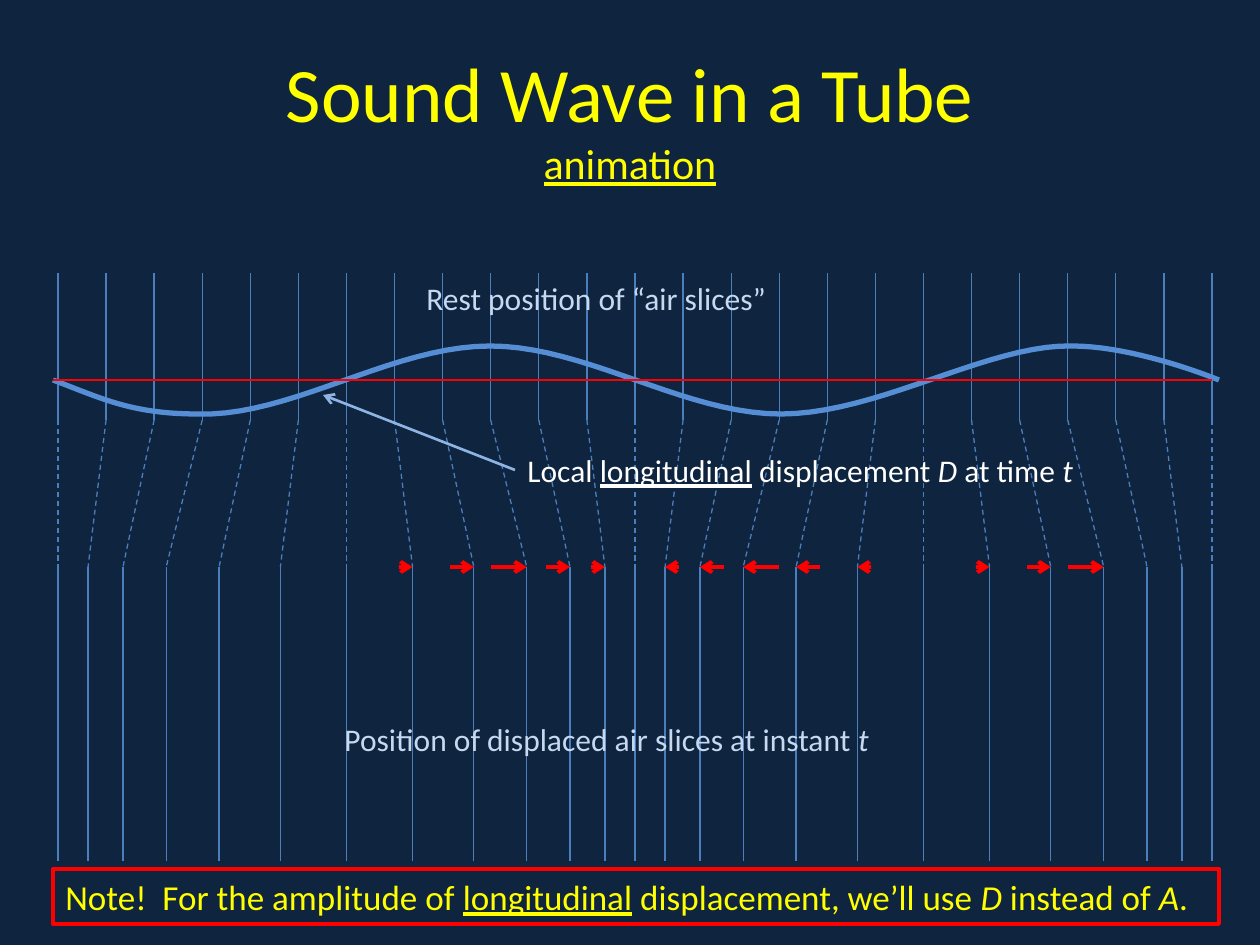
from dataclasses import dataclass
from math import pi, sin
from typing import NamedTuple

from lxml.etree import SubElement
from pptx import Presentation
from pptx.dml.color import RGBColor as Rgb
from pptx.enum.dml import MSO_LINE_DASH_STYLE as Dash
from pptx.enum.shapes import MSO_CONNECTOR as Connector, MSO_SHAPE as Preset
from pptx.enum.text import MSO_ANCHOR as Anchor, PP_ALIGN as Align
from pptx.oxml.ns import qn
from pptx.util import Pt

EMU_PER_PX = 914400 / 126


@dataclass(frozen=True)
class Theme:
    background: Rgb = Rgb.from_string("0F243E")
    accent: Rgb = Rgb.from_string("FFFF00")
    slice: Rgb = Rgb.from_string("4B7EBC")
    wave: Rgb = Rgb.from_string("558ED5")
    pointer: Rgb = Rgb.from_string("8EB4E3")
    caption: Rgb = Rgb.from_string("C6D9F1")
    label: Rgb = Rgb.from_string("FFFFFF")
    red: Rgb = Rgb.from_string("FF0000")
    font: str = "Calibri"
    title_size: int = 44
    subtitle_size: int = 24
    note_size: int = 20
    label_size: int = 18


class Box(NamedTuple):
    left: int
    top: int
    width: int
    height: int


THEME = Theme()
SLICE_COUNT = 25
SLICES_PER_HALF_WAVE = 6
AMPLITUDE = 36
ARROW_LENGTHS = (0, 12, 24, 36, 24, 12)
ARROW_SLICES = range(7, 22)
WAVE_CURVES = (
    ((48, 18), (78, 34), (145, 34)),
    ((238, 37), (339, -34), (437, -34)),
    ((534, -34), (631, 34), (728, 34)),
    ((825, 34), (936, -36), (1019, -34)),
    ((1084, -34), (1166, 0), (1166, 0)),
)
CURVE_STEPS = 20


def px(length):
    return round(length * EMU_PER_PX)


def add_line(slide, start, end, color, width, dash=None, arrow=False):
    points = [px(value) for value in (*start, *end)]
    line = slide.shapes.add_connector(Connector.STRAIGHT, *points)
    line.line.color.rgb = color
    line.line.width = Pt(width)
    if dash:
        line.line.dash_style = dash
    if arrow:
        SubElement(line.line._get_or_add_ln(), qn("a:tailEnd"), type="arrow")
    SubElement(line._element.spPr, qn("a:effectLst"))
    return line


def format_run(run, size, color, style=""):
    run.font.name = THEME.font
    run.font.size = Pt(size)
    run.font.color.rgb = color
    if style == "underline":
        run.font.underline = True
    if style == "italic":
        run.font.italic = True


def write_runs(shape, parts, size, color):
    shape.text_frame.word_wrap = True
    paragraph = shape.text_frame.paragraphs[0]
    paragraph.alignment = Align.LEFT
    for text, style in parts:
        run = paragraph.add_run()
        run.text = text
        format_run(run, size, color, style)


def add_label(slide, box, parts, color):
    label = slide.shapes.add_textbox(*map(px, box))
    write_runs(label, parts, THEME.label_size, color)
    return label


def add_title(slide, box):
    title = slide.shapes.add_textbox(*map(px, box))
    frame = title.text_frame
    frame.word_wrap = True
    frame.vertical_anchor = Anchor.MIDDLE
    paragraph = frame.paragraphs[0]
    paragraph.text = "Sound Wave in a Tube\vanimation"
    paragraph.alignment = Align.CENTER
    heading, subtitle = paragraph.runs
    format_run(heading, THEME.title_size, THEME.accent)
    format_run(subtitle, THEME.subtitle_size, THEME.accent, "underline")


def add_slices(slide, box):
    rest_bottom = box.top + box.height // 4
    displaced_top = box.top + box.height // 2
    bottom = box.top + box.height
    pitch = box.width / (SLICE_COUNT - 1)
    for index in range(SLICE_COUNT):
        rest = box.left + index * pitch
        shift = -AMPLITUDE * sin(pi * index / SLICES_PER_HALF_WAVE)
        displaced = rest + shift
        stops = ((rest, box.top), (rest, rest_bottom),
                 (displaced, displaced_top), (displaced, bottom))
        for start, end, dash in zip(stops, stops[1:], (None, Dash.DASH, None)):
            add_line(slide, start, end, THEME.slice, 0.75, dash)
        length = ARROW_LENGTHS[index % SLICES_PER_HALF_WAVE]
        if index in ARROW_SLICES and length:
            tail = displaced - (length if shift > 0 else -length)
            add_line(slide, (tail, displaced_top), (displaced, displaced_top),
                     THEME.red, 2.25, arrow=True)


def curve_points(start, curves):
    for first, second, end in curves:
        for step in range(1, CURVE_STEPS + 1):
            t = step / CURVE_STEPS
            weights = ((1 - t) ** 3, 3 * t * (1 - t) ** 2, 3 * t * t * (1 - t), t ** 3)
            yield tuple(
                sum(weight * value for weight, value in zip(weights, values))
                for values in zip(start, first, second, end)
            )
        start = end


def add_wave(slide, box):
    axis = box.top + box.height // 2
    builder = slide.shapes.build_freeform(px(box.left), px(axis))
    points = curve_points((0, 0), WAVE_CURVES)
    builder.add_line_segments(
        [(px(box.left + x), px(axis + y)) for x, y in points], close=False)
    wave = builder.convert_to_shape()
    wave.shadow.inherit = False
    wave.fill.background()
    wave.line.color.rgb = THEME.wave
    wave.line.width = Pt(3)
    add_line(slide, (box.left, axis), (box.left + 1159, axis), THEME.red, 1.5)


def add_labels(slide, box):
    add_label(slide, Box(box.left + 356, box.top, 432, 59),
              [("Rest position of “air slices”", "")], THEME.caption)
    displacement = add_label(
        slide, Box(box.left + 457, box.top + 172, 649, 50),
        [("Local ", ""), ("longitudinal", "underline"), (" displacement ", ""),
         ("D", "italic"), (" at time ", ""), ("t", "italic")], THEME.label)
    pointer = add_line(slide, (box.left + 457, box.top + 197),
                       (box.left + 265, box.top + 122),
                       THEME.pointer, 1.5, arrow=True)
    pointer.begin_connect(displacement, 1)
    add_label(slide, Box(box.left + 274, box.top + 441, 687, 59),
              [("Position of displaced air slices at instant ", ""), ("t", "italic")],
              THEME.caption)


def add_note(slide, box):
    note = slide.shapes.add_shape(Preset.RECTANGLE, *map(px, box))
    note.shadow.inherit = False
    note.fill.background()
    note.line.color.rgb = THEME.red
    note.line.width = Pt(2.25)
    write_runs(note, [
        ("Note!  For the amplitude of ", ""), ("longitudinal", "underline"),
        (" displacement, we’ll use ", ""), ("D", "italic"),
        (" instead of ", ""), ("A", "italic"), (".", "")],
        THEME.note_size, THEME.accent)


def main():
    presentation = Presentation()
    presentation.slide_width, presentation.slide_height = px(1260), px(945)
    slide = presentation.slides.add_slide(presentation.slide_layouts[6])
    slide.background.fill.solid()
    slide.background.fill.fore_color.rgb = THEME.background
    diagram = Box(58, 273, 1154, 588)
    add_title(slide, Box(63, 38, 1134, 157))
    add_slices(slide, diagram)
    add_wave(slide, Box(53, 346, 1166, 68))
    add_labels(slide, diagram)
    add_note(slide, Box(53, 869, 1166, 55))
    presentation.save("out.pptx")


if __name__ == "__main__":
    main()
